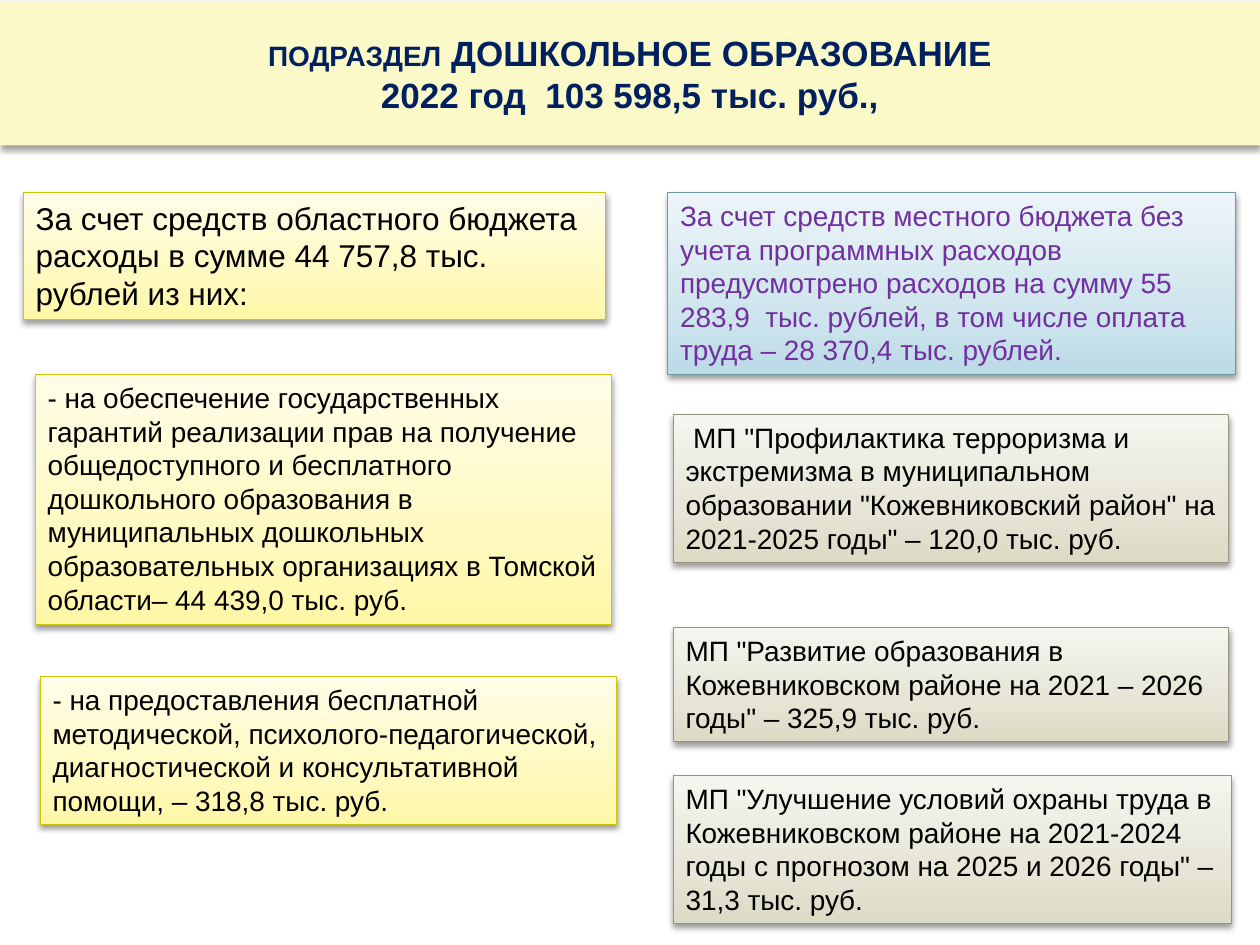
"""Builds the slide on preschool education spending in 2022."""
from copy import deepcopy

from lxml import etree
from pptx import Presentation
from pptx.dml.color import RGBColor
from pptx.enum.shapes import MSO_SHAPE
from pptx.enum.text import MSO_ANCHOR, MSO_AUTO_SIZE, PP_ALIGN
from pptx.oxml.ns import qn
from pptx.util import Cm, Pt

RECTANGLE = MSO_SHAPE.RECTANGLE
TOP, MIDDLE = MSO_ANCHOR.TOP, MSO_ANCHOR.MIDDLE
LEFT, CENTER = PP_ALIGN.LEFT, PP_ALIGN.CENTER
FIT_SHAPE, NO_FIT = MSO_AUTO_SIZE.SHAPE_TO_FIT_TEXT, MSO_AUTO_SIZE.NONE

THEME = {
    "font": "Arial",
    "band": "FCF9C8",
    "heading": "002060",
    "shadow": "000000",
    "heading_size": 20,
    "lead_size": 18,
    "body_size": 16,
    "stops": (0, 0.35, 1),
    "regional": {"fill": ("FFF7A6", "FFF9C0", "FFFDE7"), "line": "CFC608", "text": "000000"},
    "local": {"fill": ("BBDBE7", "CFE5ED", "ECF5F9"), "line": "7197A3", "text": "7030A0"},
    "programme": {"fill": ("DCDBC5", "E6E5D6", "F6F5EF"), "line": "96957C", "text": "000000"},
}


def add_shadow(shape, blur):
    shape.shadow.inherit = False
    effects = shape._element.spPr.find(qn("a:effectLst"))
    outer = etree.SubElement(effects, qn("a:outerShdw"), blurRad=str(Pt(blur)),
                             dist=str(Pt(2)), dir="5400000", rotWithShape="0")
    color = etree.SubElement(outer, qn("a:srgbClr"), val=THEME["shadow"])
    etree.SubElement(color, qn("a:alpha"), val="38000")


def add_run(paragraph, text, size, color, bold=False):
    run = paragraph.add_run()
    run.text = text
    run.font.name = THEME["font"]
    run.font.size = Pt(size)
    run.font.bold = bold
    run.font.color.rgb = RGBColor.from_string(color)
    return run


presentation = Presentation()
presentation.slide_width, presentation.slide_height = Cm(25.4), Cm(19.05)
slide = presentation.slides.add_slide(presentation.slide_layouts[5])

heading = slide.shapes.title
heading.left, heading.top, heading.width, heading.height = Cm(0), Cm(0.03), Cm(25.4), Cm(2.9)
heading.fill.solid()
heading.fill.fore_color.rgb = RGBColor.from_string(THEME["band"])
add_shadow(heading, 3.1)
heading.text_frame.auto_size = NO_FIT
heading.text_frame.vertical_anchor = MIDDLE
heading_line = heading.text_frame.paragraphs[0]
heading_line.alignment = CENTER
add_run(heading_line, "ПОДРАЗДЕЛ", THEME["body_size"], THEME["heading"], True)
subject = add_run(heading_line, " ДОШКОЛЬНОЕ ОБРАЗОВАНИЕ", THEME["heading_size"], THEME["heading"], True)
heading_line.add_line_break()
heading_line._p[-1].append(deepcopy(subject._r.rPr))
add_run(heading_line, "2022 год  103 598,5 тыс. руб.,", THEME["heading_size"], THEME["heading"], True)

budget_boxes = [
    ("local", "body_size", 13.46, 3.88, 11.45, 3.68,
     "За счет средств местного бюджета без учета программных расходов предусмотрено расходов "
     "на сумму 55 283,9  тыс. рублей, в том числе оплата труда – 28 370,4 тыс. рублей."),
    ("programme", "body_size", 13.57, 15.63, 11.25, 2.99,
     'МП "Улучшение условий охраны труда в Кожевниковском районе на 2021-2024 годы '
     'с прогнозом на 2025 и 2026 годы" – 31,3 тыс. руб.'),
    ("regional", "lead_size", 0.47, 3.88, 11.74, 2.57,
     "За счет средств областного бюджета  расходы в сумме 44 757,8 тыс. рублей из них:"),
    ("regional", "body_size", 0.71, 7.55, 11.62, 5.05,
     "- на обеспечение государственных гарантий реализации прав на получение общедоступного "
     "и бесплатного дошкольного образования в муниципальных дошкольных образовательных "
     "организациях в Томской области– 44 439,0 тыс. руб."),
    ("regional", "body_size", 0.81, 13.64, 11.62, 2.99,
     "- на предоставления бесплатной методической, психолого-педагогической, "
     "диагностической и консультативной помощи, – 318,8 тыс. руб."),
    ("programme", "body_size", 13.57, 12.65, 11.2, 2.3,
     'МП "Развитие образования в Кожевниковском районе на 2021 – 2026 годы" – 325,9 тыс. руб.'),
    ("programme", "body_size", 13.57, 8.35, 11.2, 2.99,
     ' МП "Профилактика терроризма и экстремизма в муниципальном образовании '
     '"Кожевниковский район" на 2021-2025 годы" – 120,0 тыс. руб.'),
]

for source, size, left, top, width, height, wording in budget_boxes:
    colors = THEME[source]
    box = slide.shapes.add_shape(RECTANGLE, Cm(left), Cm(top), Cm(width), Cm(height))
    box.fill.gradient()
    box.fill.gradient_angle = 90
    stop_list = box._element.spPr.find(qn("a:gradFill")).find(qn("a:gsLst"))
    stop_list.append(deepcopy(stop_list[-1]))
    for stop, position, color in zip(box.fill.gradient_stops, THEME["stops"], colors["fill"]):
        stop.position = position
        stop.color.rgb = RGBColor.from_string(color)
    box.line.color.rgb = RGBColor.from_string(colors["line"])
    box.line.width = Pt(0.5)
    add_shadow(box, 3.5)
    box.text_frame.word_wrap = True
    box.text_frame.auto_size = FIT_SHAPE
    box.text_frame.vertical_anchor = TOP
    statement = box.text_frame.paragraphs[0]
    statement.alignment = LEFT
    add_run(statement, wording, THEME[size], colors["text"])

presentation.save("out.pptx")
